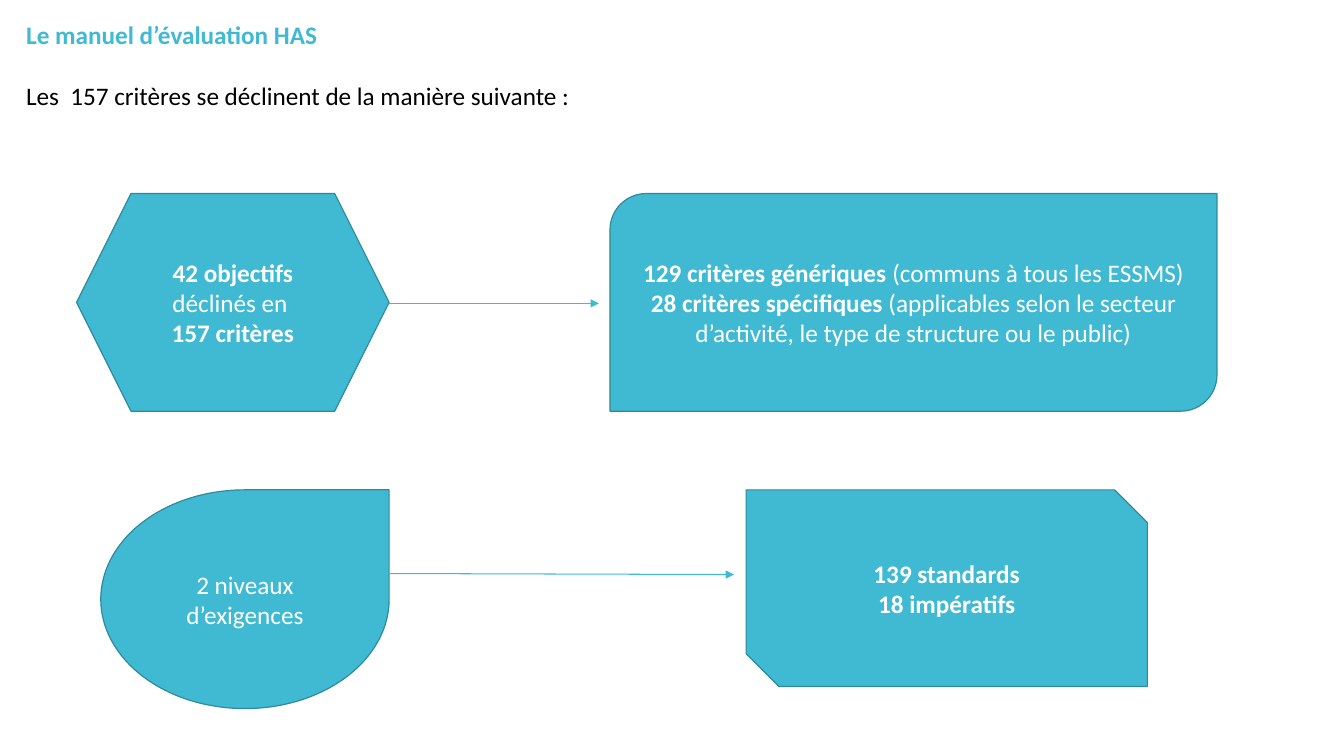
from lxml.etree import SubElement
from pptx import Presentation
from pptx.dml.color import RGBColor
from pptx.enum.shapes import MSO_CONNECTOR, MSO_SHAPE
from pptx.enum.text import MSO_ANCHOR, MSO_AUTO_SIZE, PP_ALIGN
from pptx.oxml.ns import qn
from pptx.util import Pt

PX = 9144
COLORS = {
    "turquoise": RGBColor.from_string("40BAD2"),
    "outline": RGBColor.from_string("2F8A9B"),
    "white": RGBColor.from_string("FFFFFF"),
    "black": RGBColor.from_string("000000"),
}


def style_paragraph(para, color, align):
    para.alignment = align
    para.font.name = "Calibri"
    para.font.size = Pt(18)
    para.font.color.rgb = COLORS[color]


deck = Presentation()
deck.slide_width, deck.slide_height = 1333 * PX, 750 * PX
page = deck.slides.add_slide(deck.slide_layouts[5])

title = page.shapes.title
intro = page.shapes.add_textbox(0, 0, 0, 0)
headings = [
    (title, 14, "Le manuel d’évaluation HAS", "turquoise", True),
    (intro, 75, "Les  157 critères se déclinent de la manière suivante :", "black", False),
]
for box, top, text, color, bold in headings:
    box.left, box.top, box.width, box.height = 16 * PX, top * PX, 1300 * PX, 40 * PX
    frame = box.text_frame
    frame.word_wrap = True
    frame.auto_size = MSO_AUTO_SIZE.NONE
    frame.vertical_anchor = MSO_ANCHOR.TOP
    frame.text = text
    style_paragraph(frame.paragraphs[0], color, PP_ALIGN.LEFT)
    frame.paragraphs[0].font.bold = bold

blocks = [
    (MSO_SHAPE.HEXAGON, 76, 192, 310, 216, [
        [("42 objectifs", True)],
        [("déclinés en ", False)],
        [("157 critères", True)],
    ]),
    (MSO_SHAPE.ROUND_2_DIAG_RECTANGLE, 605, 192, 602, 216, [
        [("129 critères génériques ", True), ("(communs à tous les ESSMS)", False)],
        [("28 critères spécifiques ", True),
         ("(applicables selon le secteur d’activité, le type de structure ou le public)", False)],
    ]),
    (MSO_SHAPE.TEAR, 100, 486, 286, 217, [
        [("2 niveaux d’exigences", False)],
    ]),
    (MSO_SHAPE.SNIP_2_DIAG_RECTANGLE, 740, 486, 398, 195, [
        [("139 standards", True)],
        [("18 impératifs", True)],
    ]),
]
for kind, left, top, width, height, lines in blocks:
    block = page.shapes.add_shape(kind, left * PX, top * PX, width * PX, height * PX)
    block.shadow.inherit = False
    block.fill.solid()
    block.fill.fore_color.rgb = COLORS["turquoise"]
    block.line.color.rgb = COLORS["outline"]
    block.line.width = Pt(0.85)
    frame = block.text_frame
    frame.word_wrap = True
    frame.vertical_anchor = MSO_ANCHOR.MIDDLE
    for index, line in enumerate(lines):
        para = frame.add_paragraph() if index else frame.paragraphs[0]
        style_paragraph(para, "white", PP_ALIGN.CENTER)
        for text, bold in line:
            span = para.add_run()
            span.text = text
            span.font.bold = bold

for start_x, start_y, end_x, end_y in [(386, 301, 594, 301), (387, 569, 728, 570)]:
    arrow = page.shapes.add_connector(
        MSO_CONNECTOR.STRAIGHT, start_x * PX, start_y * PX, end_x * PX, end_y * PX)
    arrow.line.color.rgb = COLORS["turquoise"]
    arrow.line.width = Pt(0.75)
    SubElement(arrow.line._get_or_add_ln(), qn("a:tailEnd"), type="triangle")
    SubElement(arrow._element.spPr, qn("a:effectLst"))

deck.save("out.pptx")
